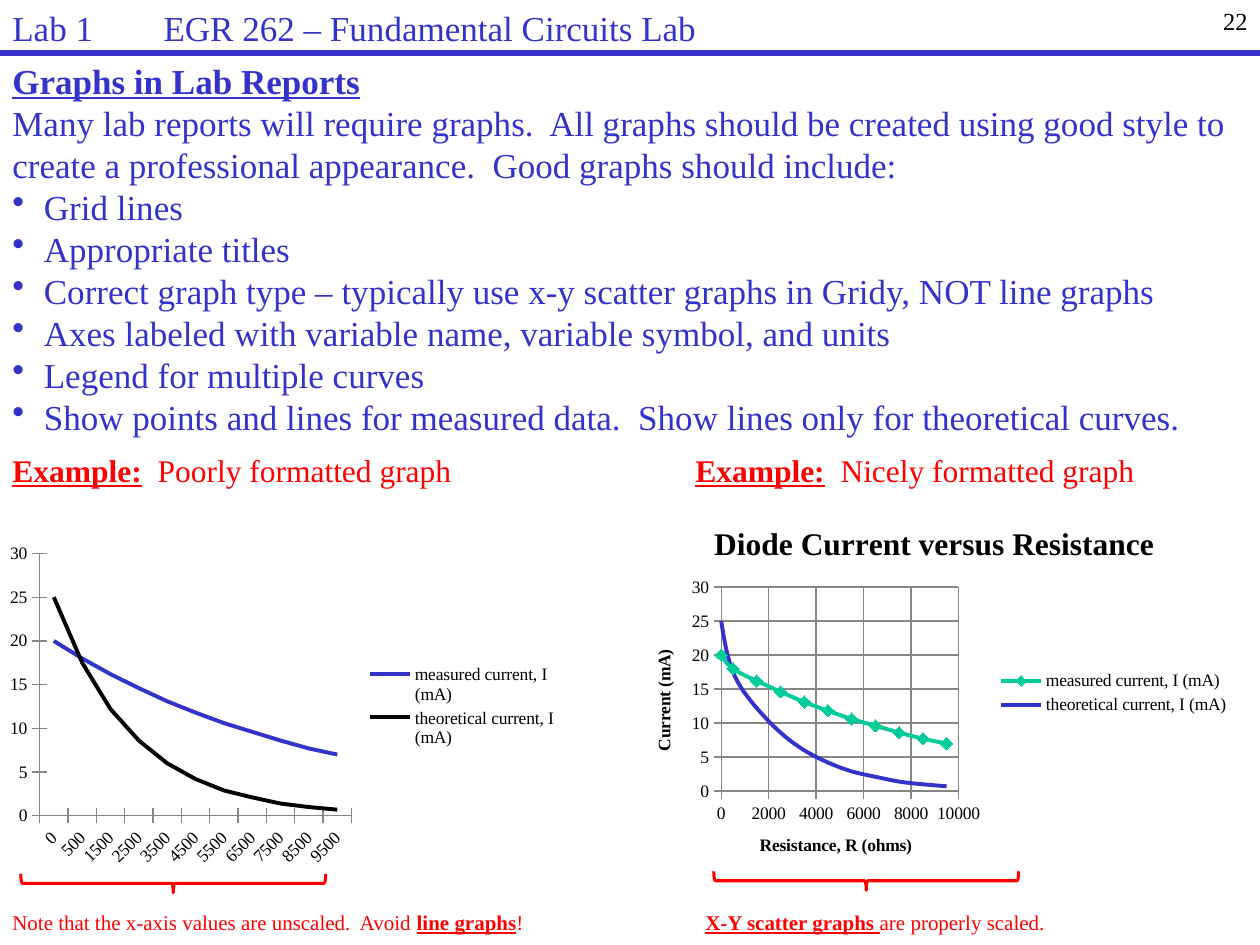
import pptx
import pptx.chart.data
import pptx.dml.color
import pptx.enum.chart
import pptx.enum.shapes
import pptx.enum.text
import pptx.oxml
import pptx.oxml.ns
import pptx.util
from pptx.util import Inches, Pt

FONT = "Times New Roman"
BLUE, RED, BLACK, GREEN, GRAY = "3333CC", "FF0000", "000000", "00CC99", "868686"

HEADER = "Lab 1\tEGR 262 – Fundamental Circuits Lab"
PAGE_NUMBER = "22"
HEADING = "Graphs in Lab Reports"
INTRO = ("Many lab reports will require graphs.  All graphs should be created using good style "
         "to create a professional appearance.  Good graphs should include:")
GUIDELINES = [
    "Grid lines",
    "Appropriate titles",
    "Correct graph type – typically use x-y scatter graphs in Gridy, NOT line graphs",
    "Axes labeled with variable name, variable symbol, and units",
    "Legend for multiple curves",
    "Show points and lines for measured data.  Show lines only for theoretical curves.",
]
EXAMPLES = [
    (0, [("Example:", True), ("  Poorly formatted graph", False)]),
    (5.42, [("Example:", True), ("  Nicely formatted graph", False)]),
]
NOTES = [
    (0, [("Note that the x-axis values are unscaled.  Avoid ", False),
         ("line graphs", True), ("!", False)]),
    (5.5, [("X-Y scatter graphs ", True), ("are properly scaled.", False)]),
]
BRACES = [(1.3, 5.8), (6.8, 5.78)]
RESISTANCES = [0] + list(range(500, 10000, 1000))
CURRENTS = {
    "measured current, I (mA)": [20, 18, 16.2, 14.6, 13.1, 11.8, 10.6, 9.6, 8.6, 7.7, 7],
    "theoretical current, I (mA)": [25, 17.5, 12.2, 8.6, 6, 4.2, 2.9, 2.1, 1.4, 1, 0.7],
}
CHART_TITLE = "Diode Current versus Resistance"
RESISTANCE_TITLE = "Resistance, R (ohms)"
CURRENT_TITLE = "Current (mA)"

qn = pptx.oxml.ns.qn
ChartType = pptx.enum.chart.XL_CHART_TYPE
Marker = pptx.enum.chart.XL_MARKER_STYLE

deck = pptx.Presentation()
deck.slide_width, deck.slide_height = Inches(10), Inches(7.5)
slide = deck.slides.add_slide(deck.slide_layouts[6])


def rgb(color):
    return pptx.dml.color.RGBColor.from_string(color)


def style_font(font, size, color, bold=False):
    font.name, font.size, font.bold = FONT, Pt(size), bold
    font.color.rgb = rgb(color)


def style_line(line, color, width):
    line.color.rgb = rgb(color)
    line.width = Pt(width)


def add_xml(parent, tag, **attributes):
    child = parent.makeelement(qn(tag), attributes)
    parent.append(child)
    return child


def add_text(box, paragraphs, size, color, grow=True):
    frame = slide.shapes.add_textbox(*map(Inches, box)).text_frame
    frame.word_wrap = True
    if grow:
        frame.auto_size = pptx.enum.text.MSO_AUTO_SIZE.SHAPE_TO_FIT_TEXT
    for index, runs in enumerate(paragraphs):
        paragraph = frame.paragraphs[0] if index == 0 else frame.add_paragraph()
        for text, emphasis in runs:
            run = paragraph.add_run()
            run.text = text
            style_font(run.font, size, color, emphasis)
            run.font.underline = emphasis
    return frame.paragraphs


def set_layout(parent, position, box, inner=False):
    for old in parent.findall(qn("c:layout")):
        parent.remove(old)
    layout = parent.makeelement(qn("c:layout"), {})
    manual = add_xml(layout, "c:manualLayout")
    if inner:
        add_xml(manual, "c:layoutTarget", val="inner")
    for side in "xy":
        add_xml(manual, f"c:{side}Mode", val="edge")
    for side, value in zip("xywh", box):
        add_xml(manual, f"c:{side}", val=str(value))
    parent.insert(position, layout)


def add_title(owner, text, size):
    owner.has_title = True
    title = owner.chart_title if hasattr(owner, "chart_title") else owner.axis_title
    run = title.text_frame.paragraphs[0].add_run()
    run.text = text
    style_font(run.font, size, BLACK, True)


def add_current_chart(kind, box, data, colors, plot_box, legend_box, smooth):
    chart = slide.shapes.add_chart(kind, *map(Inches, box), data).chart
    style_font(chart.font, 10, BLACK)
    chart.has_title = False
    chart.has_legend = True
    chart.legend.position = pptx.enum.chart.XL_LEGEND_POSITION.RIGHT
    chart.legend.include_in_layout = False
    plot = chart.plots[0]
    plot.vary_by_categories = False
    for series, color in zip(plot.series, colors):
        style_line(series.format.line, color, 2.25)
        series.marker.style = Marker.NONE
    for flag in chart.element.iter(qn("c:smooth")):
        flag.set("val", str(int(smooth)))
    for axis in (chart.category_axis, chart.value_axis):
        axis.major_tick_mark = pptx.enum.chart.XL_TICK_MARK.CROSS
        axis.minor_tick_mark = pptx.enum.chart.XL_TICK_MARK.NONE
        style_line(axis.format.line, GRAY, 0.75)
        axis.has_major_gridlines = smooth or axis is chart.value_axis
    for grid_axis in (chart.category_axis, chart.value_axis):
        if grid_axis.has_major_gridlines:
            style_line(grid_axis.major_gridlines.format.line, GRAY, 0.75)
    chart.category_axis.has_major_gridlines = smooth
    chart.value_axis.minimum_scale, chart.value_axis.maximum_scale = 0, 30
    chart.value_axis.major_unit = 5
    set_layout(chart.element.find(".//" + qn("c:plotArea")), 0, plot_box, inner=True)
    set_layout(chart.element.find(".//" + qn("c:legend")), 1, legend_box)
    return chart


body = [[(HEADING, True)], [(INTRO, False)]] + [[(item, False)] for item in GUIDELINES]
for index, paragraph in enumerate(add_text((0, 0.42, 10, 3.13), body, 20, BLUE)):
    paragraph.line_spacing = Pt(24)
    if index >= 2:
        properties = paragraph._p.get_or_add_pPr()
        properties.set("marL", str(Inches(0.25)))
        properties.set("indent", str(-Inches(0.25)))
        add_xml(properties, "a:buChar", char="•")

for left, runs in EXAMPLES:
    add_text((left, 3.53, 4.08, 0.4), [runs], 18, RED)

line_data = pptx.chart.data.CategoryChartData()
line_data.categories = [str(value) for value in RESISTANCES]
scatter_data = pptx.chart.data.XyChartData()
for name, currents in CURRENTS.items():
    line_data.add_series(name, currents)
    curve = scatter_data.add_series(name)
    for resistance, current in zip(RESISTANCES, currents):
        curve.add_data_point(resistance, current)

poor = add_current_chart(ChartType.LINE, (0, 4.26, 4.5, 2.67), line_data, (BLUE, BLACK),
                         (0.07, 0.05, 0.55, 0.78), (0.64, 0.37, 0.35, 0.27), False)
style_font(poor.category_axis.tick_labels.font, 10, BLACK)
poor.category_axis._element.find(".//" + qn("a:bodyPr")).set("rot", "-2700000")

nice = add_current_chart(ChartType.XY_SCATTER_SMOOTH, (5, 4, 4.83, 3), scatter_data, (GREEN, BLUE),
                         (0.15, 0.22, 0.39, 0.54), (0.6, 0.43, 0.39, 0.14), True)
add_title(nice, CHART_TITLE, 18)
add_title(nice.category_axis, RESISTANCE_TITLE, 10)
add_title(nice.value_axis, CURRENT_TITLE, 10)
nice.category_axis.minimum_scale, nice.category_axis.maximum_scale = 0, 10000
nice.category_axis.major_unit = 2000
measured_marker = nice.plots[0].series[0].marker
measured_marker.style, measured_marker.size = Marker.DIAMOND, 7
measured_marker.format.fill.solid()
measured_marker.format.fill.fore_color.rgb = rgb(GREEN)
style_line(measured_marker.format.line, GREEN, 0.75)

for left, top in BRACES:
    brace = slide.shapes.add_shape(pptx.enum.shapes.MSO_SHAPE.LEFT_BRACE,
                                   Inches(left), Inches(top), Inches(0.15), Inches(2.42))
    brace.rotation = 270
    brace.shadow.inherit = False
    brace.fill.background()
    style_line(brace.line, RED, 1.75)

for left, runs in NOTES:
    add_text((left, 7.17, 4.33, 0.3), [runs], 12, RED)

number = add_text((7.92, 0, 2.08, 0.42), [[(PAGE_NUMBER, False)]], 14, BLACK, grow=False)
number[0].alignment = pptx.enum.text.PP_ALIGN.RIGHT

rule = slide.shapes.add_connector(pptx.enum.shapes.MSO_CONNECTOR.STRAIGHT,
                                  Inches(0), Inches(0.42), Inches(10), Inches(0.42))
style_line(rule.line, BLUE, 3)
add_xml(rule._element.spPr, "a:effectLst")

header = add_text((0, 0, 7.33, 0.33), [[(HEADER, False)]], 20, BLUE, grow=False)[0]
header.space_before = Pt(1)
tabs = add_xml(header._p.get_or_add_pPr(), "a:tabLst")
add_xml(tabs, "a:tab", pos=str(Inches(1.2)), algn="l")

deck.save("out.pptx")
